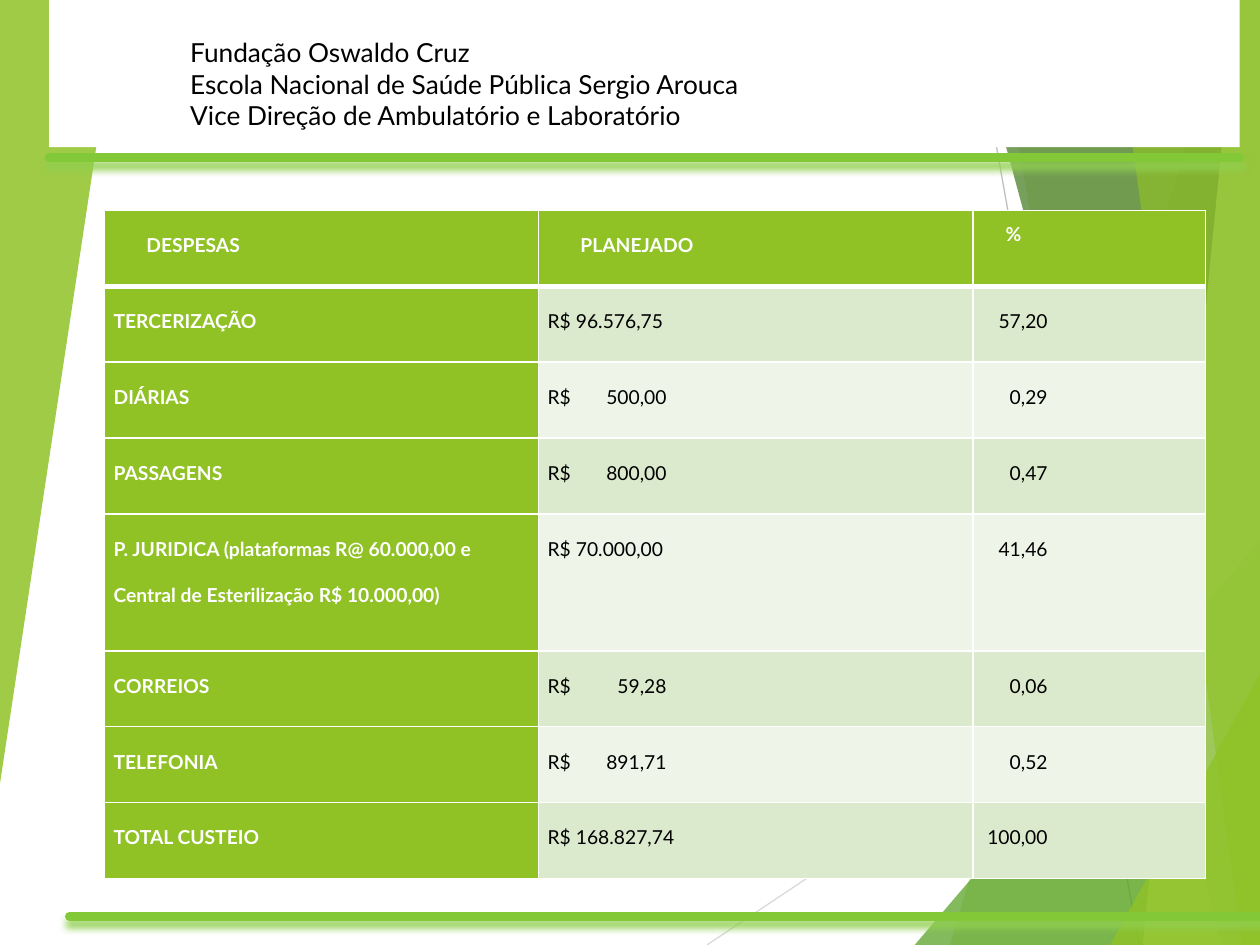
from lxml import etree
from pptx import Presentation
from pptx.dml.color import RGBColor
from pptx.enum.dml import MSO_THEME_COLOR
from pptx.enum.shapes import MSO_CONNECTOR, MSO_SHAPE
from pptx.enum.text import MSO_ANCHOR, MSO_AUTO_SIZE, PP_ALIGN
from pptx.oxml.ns import qn
from pptx.util import Cm, Pt

STRAIGHT = MSO_CONNECTOR.STRAIGHT
RECT = MSO_SHAPE.RECTANGLE
TOP = MSO_ANCHOR.TOP
FIXED = MSO_AUTO_SIZE.NONE
LEFT, RIGHT, JUSTIFY = PP_ALIGN.LEFT, PP_ALIGN.RIGHT, PP_ALIGN.JUSTIFY

WIDE, HIGH = 25.4, 19.05
FONT = "Lato"
LIME, WHITE, BLACK = "90C226", "FFFFFF", "000000"
BANDS = ["DBE9CD", "EEF4E8"]

HEADER = [
    "Fundação Oswaldo Cruz",
    "Escola Nacional de Saúde Pública Sergio Arouca",
    "Vice Direção de Ambulatório e Laboratório",
]
HEADS = [("DESPESAS", 0.66, 2), ("PLANEJADO", 0.66, 2), ("%", 0.48, 1.5)]
COSTS = [
    ("TERCERIZAÇÃO", "R$ 96.576,75", "57,20"),
    ("DIÁRIAS", "R$\t500,00", "0,29"),
    ("PASSAGENS", "R$\t800,00", "0,47"),
    ("P. JURIDICA (plataformas R@ 60.000,00 e Central de Esterilização R$ 10.000,00)",
     "R$ 70.000,00", "41,46"),
    ("CORREIOS", "R$\t59,28", "0,06"),
    ("TELEFONIA", "R$\t891,71", "0,52"),
    ("TOTAL CUSTEIO", "R$ 168.827,74", "100,00"),
]
COLS = [8.75, 8.75, 4.69]
ROWS = [1.53] * 4 + [2.76] + [1.53] * 3


def hue(code):
    """Turn a hex string into a colour."""
    return RGBColor.from_string(code)


def node(root, tag, **attrs):
    """Append an XML child with the given attributes."""
    return etree.SubElement(root, qn(tag), {k: str(v) for k, v in attrs.items()})


def paint(shape, code, alpha=100):
    """Give a shape a flat fill without line or shadow."""
    shape.shadow.inherit = False
    shape.fill.solid()
    shape.fill.fore_color.rgb = hue(code)
    shape.line.fill.background()
    if alpha < 100:
        tint = shape.element.find(".//" + qn("a:srgbClr"))
        node(tint, "a:alpha", val=alpha * 1000)


def facet(slide, points, code, alpha):
    """Draw a translucent polygon."""
    first, *rest = [(Cm(x), Cm(y)) for x, y in points]
    build = slide.shapes.build_freeform(*first, scale=1.0)
    build.add_line_segments(rest, close=True)
    paint(build.convert_to_shape(), code, alpha)


def shard(slide, top, foot, code, alpha):
    """Draw a full-height facet that reaches the right edge."""
    facet(slide, [(top, 0), (foot, HIGH), (WIDE, HIGH), (WIDE, 0)], code, alpha)


def wedge(slide, foot, peak, code, alpha):
    """Draw a facet in the lower right corner."""
    facet(slide, [(foot, HIGH), (WIDE, peak), (WIDE, HIGH)], code, alpha)


def rule(slide, start, end, code, size):
    """Draw a straight line and return it with its empty effect list."""
    line = slide.shapes.add_connector(STRAIGHT, *map(Cm, start + end))
    line.line.color.rgb = hue(code)
    line.line.width = Pt(size)
    return line, node(line.element.spPr, "a:effectLst")


def glow(slide, left, right, y):
    """Draw a thick green bar with a soft shadow below."""
    line, effects = rule(slide, (left, y), (right, y), "83C937", 5)
    line.element.spPr.find(qn("a:ln")).set("cap", "rnd")
    shade = node(effects, "a:outerShdw", blurRad=Pt(4), dist=Pt(4), dir=5400000,
                 algn="ctr", rotWithShape=0)
    node(shade, "a:srgbClr", val="92D050")


def write(par, text, size, code, bold=False):
    """Add one formatted run to a paragraph."""
    run = par.add_run()
    run.text = text
    run.font.name = FONT
    run.font.size = Pt(size)
    run.font.bold = bold
    run.font.color.rgb = hue(code)


def edge(cell, row):
    """Set white borders, thicker beneath the head row."""
    for side in "LRTB":
        thick = (row, side) in ((0, "B"), (1, "T"))
        line = node(cell._tc.get_or_add_tcPr(), "a:ln" + side, w=Pt(3 if thick else 1))
        node(node(line, "a:solidFill"), "a:srgbClr", val=WHITE)


def fill_cell(cell, row, text, back, ink, bold, space=2, lead=0, align=LEFT):
    """Format a table cell and write its text."""
    edge(cell, row)
    cell.fill.solid()
    cell.fill.fore_color.rgb = hue(back)
    cell.vertical_anchor = TOP
    cell.margin_left = Cm(0.18)
    cell.margin_right = Cm(3.18 if align == RIGHT else 0.18)
    cell.margin_top = cell.margin_bottom = 0
    par = cell.text_frame.paragraphs[0]
    par.alignment = align
    par.line_spacing = space
    props = par._p.get_or_add_pPr()
    if lead:
        props.set("marL", str(Cm(lead)))
    if "\t" in text:
        node(node(props, "a:tabLst"), "a:tab", pos=Cm(2.4), algn="r")
    write(par, text, 11, ink, bold)


def add_costs(slide):
    """Build the table of planned costs."""
    frame = slide.shapes.add_table(len(ROWS), len(COLS), Cm(2.11), Cm(4.24),
                                   Cm(sum(COLS)), Cm(sum(ROWS)))
    table = frame.table
    for col, width in zip(table.columns, COLS):
        col.width = Cm(width)
    for row, height in zip(table.rows, ROWS):
        row.height = Cm(height)
    for c, (text, lead, space) in enumerate(HEADS):
        fill_cell(table.cell(0, c), 0, text, LIME, WHITE, True, space, lead)
    for r, (name, plan, share) in enumerate(COSTS, 1):
        band = BANDS[(r - 1) % 2]
        fill_cell(table.cell(r, 0), r, name, LIME, WHITE, True)
        fill_cell(table.cell(r, 1), r, plan, band, BLACK, False)
        fill_cell(table.cell(r, 2), r, share, band, BLACK, False, align=RIGHT)


def add_title(slide):
    """Place the header lines in the title, above the white band."""
    title = slide.shapes.title
    title.left, title.top, title.width, title.height = map(Cm, (3.58, 0.61, 13.28, 2.18))
    title.element.getparent().append(title.element)
    frame = title.text_frame
    frame.word_wrap = True
    frame.auto_size = FIXED
    frame.vertical_anchor = TOP
    for i, text in enumerate(HEADER):
        par = frame.add_paragraph() if i else frame.paragraphs[0]
        par.alignment = JUSTIFY
        par.space_before = Pt(0)
        write(par, text, 15, BLACK)


def add_back(slide):
    """Draw the green facets and thin lines behind the content."""
    slide.background.fill.solid()
    slide.background.fill.fore_color.theme_color = MSO_THEME_COLOR.BACKGROUND_1
    rule(slide, (14.25, HIGH), (WIDE, 11.61), "D9D9D9", 0.75)
    rule(slide, (19.56, 0), (22.96, HIGH), "BFBFBF", 0.75)
    shard(slide, 24.77, 19.15, LIME, 30)
    shard(slide, 20.02, 23.34, LIME, 20)
    wedge(slide, 18.44, 10.9, "54A021", 72)
    shard(slide, 19.48, 24.64, "3F7819", 70)
    shard(slide, 24.92, 23.04, "C0E474", 70)
    shard(slide, 22.43, 25.04, LIME, 65)
    wedge(slide, 22.38, 13.59, LIME, 80)
    facet(slide, [(0, 0), (2.39, 0), (0, 15.8)], LIME, 85)


def main():
    """Build and save the slide."""
    deck = Presentation()
    deck.slide_width, deck.slide_height = Cm(WIDE), Cm(HIGH)
    slide = deck.slides.add_slide(deck.slide_layouts[5])
    add_back(slide)
    band = slide.shapes.add_shape(RECT, Cm(0.99), 0, Cm(24), Cm(2.97))
    paint(band, WHITE)
    glow(slide, 0.99, 24.99, 3.18)
    glow(slide, 1.4, WIDE, 18.47)
    add_title(slide)
    add_costs(slide)
    deck.save("out.pptx")


if __name__ == "__main__":
    main()
